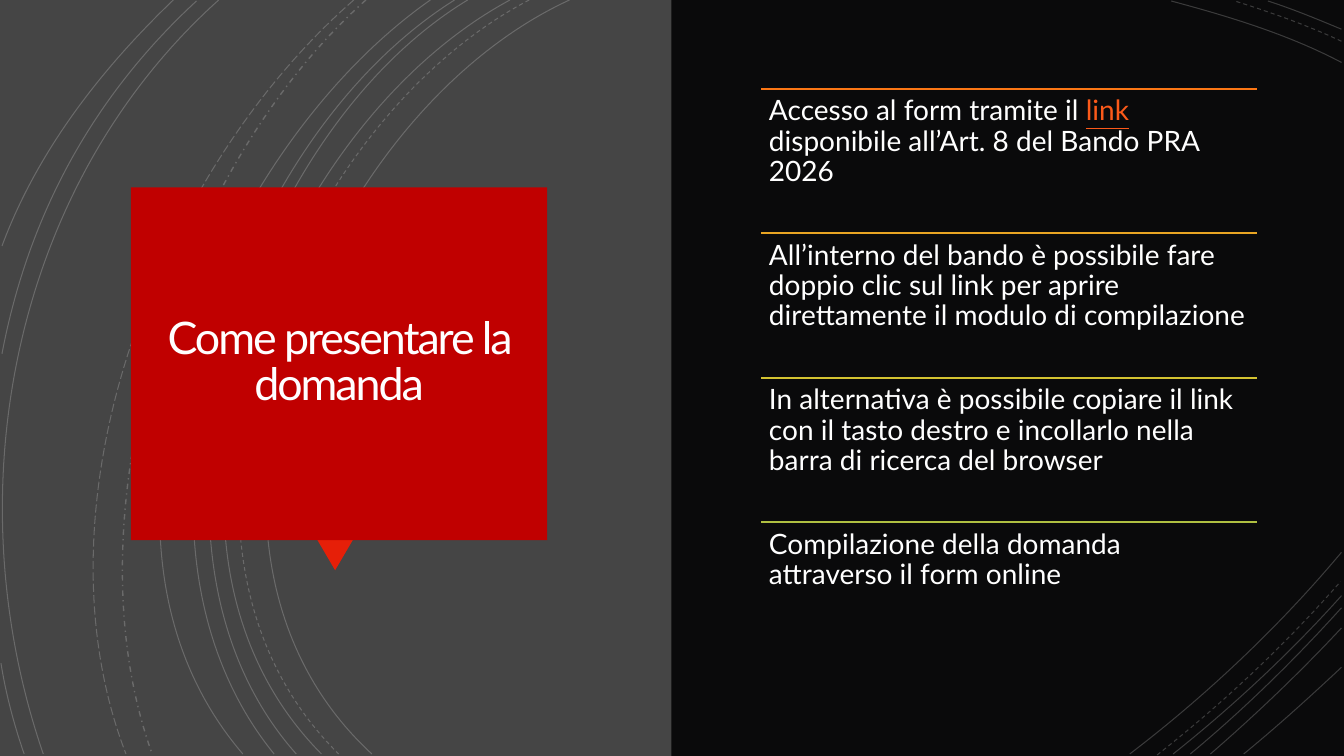
from lxml import etree
from pptx import Presentation
from pptx.dml.color import RGBColor
from pptx.enum.dml import MSO_LINE
from pptx.enum.shapes import MSO_CONNECTOR, MSO_SHAPE
from pptx.enum.text import MSO_ANCHOR, MSO_AUTO_SIZE, PP_ALIGN
from pptx.oxml.ns import qn
from pptx.util import Cm, Pt

SOLID, DASH = MSO_LINE.SOLID, MSO_LINE.DASH
DASH_DOT, LONG_DASH = MSO_LINE.DASH_DOT, MSO_LINE.LONG_DASH
RECTANGLE, TRIANGLE = MSO_SHAPE.RECTANGLE, MSO_SHAPE.ISOSCELES_TRIANGLE
STRAIGHT = MSO_CONNECTOR.STRAIGHT
CENTER, MIDDLE, TOP = PP_ALIGN.CENTER, MSO_ANCHOR.MIDDLE, MSO_ANCHOR.TOP
NO_AUTOFIT = MSO_AUTO_SIZE.NONE

FONT = "Lato"
COLORS = {
    "background": "454545", "panel": "000001", "curve": "FFFFFF",
    "title_fill": "C00000", "title_text": "FFFEFF", "pointer": "F81B02",
    "text": "FFFFFF", "link": "FC5A1A",
}

TITLE = "Come presentare la domanda"
LINK_WORD = "link"
# Rule colour, then the pieces of text of each step
STEPS = [
    ("FC7715", ["Accesso al form tramite il ", LINK_WORD,
                " disponibile all’Art. 8 del Bando PRA 2026"]),
    ("E9A523", ["All’interno del bando è possibile fare doppio clic sul link "
                "per aprire direttamente il modulo di compilazione"]),
    ("D4C331", ["In alternativa è possibile copiare il link con il tasto destro "
                "e incollarlo nella barra di ricerca del browser"]),
    ("AFBF41", ["Compilazione della domanda attraverso il form online"]),
]

# Start, two control points and end of each curve, in hundredths of 2.54 cm
CURVE_UNIT = Cm(2.54) / 100
CURVES = [
    (SOLID, [(565, 0), (315, 115), (143, 540), (369, 748)]),
    (SOLID, [(1331, 62), (1278, 34), (1218, 16), (1162, 1)]),
    (SOLID, [(1121, 748), (1197, 690), (1269, 622), (1331, 548)]),
    (DASH, [(525, 0), (285, 125), (123, 537), (336, 748)]),
    (DASH, [(1331, 41), (1297, 25), (1260, 12), (1225, 1)]),
    (DASH, [(1148, 749), (1213, 698), (1275, 640), (1330, 577)]),
    (SOLID, [(506, 0), (270, 127), (110, 537), (319, 748)]),
    (SOLID, [(1331, 29), (1307, 19), (1283, 9), (1258, 1)]),
    (SOLID, [(1164, 748), (1223, 701), (1280, 648), (1331, 591)]),
    (SOLID, [(464, 0), (244, 133), (110, 541), (294, 748)]),
    (SOLID, [(1181, 748), (1234, 704), (1284, 655), (1331, 603)]),
    (SOLID, [(451, 0), (231, 138), (97, 533), (272, 748)]),
    (SOLID, [(1201, 748), (1246, 709), (1290, 667), (1331, 623)]),
    (SOLID, [(427, 0), (217, 147), (53, 529), (241, 748)]),
    (SOLID, [(1234, 748), (1267, 721), (1299, 692), (1331, 662)]),
    (DASH_DOT, [(363, 0), (176, 166), (65, 509), (151, 748)]),
    (LONG_DASH, [(351, 0), (157, 169), (29, 499), (125, 748)]),
    (SOLID, [(217, 0), (11, 185), (-46, 490), (43, 748)]),
    (SOLID, [(195, 1), (92, 96), (28, 214), (2, 351)]),
    (SOLID, [(1, 658), (6, 689), (14, 719), (24, 748)]),
    (SOLID, [(172, 0), (100, 69), (37, 150), (2, 244)]),
]

# Lengths in cm
SLIDE_WIDTH, SLIDE_HEIGHT = 33.87, 19.05
PANEL_LEFT = 16.92
TITLE_BOX = (3.3, 4.72, 10.49, 8.89)
TITLE_INSET = 0.64
POINTER_BOX = (8, 13.61, 0.89, 0.76)
STEP_LEFT, STEP_TOP, STEP_WIDTH, STEP_HEIGHT = 19.18, 2.24, 12.5, 3.64
STEP_INSET = 0.2


def color(name):
    return RGBColor.from_string(COLORS[name])


def set_opacity(shape, percent):
    for node in shape._element.spPr.iter(qn("a:srgbClr")):
        etree.SubElement(node, qn("a:alpha"), val=str(percent * 1000))


def add_block(slide, kind, box, fill, opacity):
    block = slide.shapes.add_shape(kind, *map(Cm, box))
    block.shadow.inherit = False
    block.fill.solid()
    block.fill.fore_color.rgb = color(fill)
    block.line.fill.background()
    set_opacity(block, opacity)
    return block


def add_curve(group, dash, points):
    """Draw the four points as one cubic curve."""
    builder = group.shapes.build_freeform(*points[0], scale=CURVE_UNIT)
    builder.add_line_segments(points[1:], close=False)
    curve = builder.convert_to_shape()
    outline = curve._element.spPr.find(".//" + qn("a:path"))
    segments = outline.findall(qn("a:lnTo"))
    cubic = etree.SubElement(outline, qn("a:cubicBezTo"))
    for segment in segments:
        cubic.append(segment[0])
        outline.remove(segment)
    curve.shadow.inherit = False
    curve.fill.background()
    curve.line.color.rgb = color("curve")
    curve.line.width = Pt(1 if dash == DASH_DOT else 0.75)
    curve.line.dash_style = dash
    set_opacity(curve, 20)


def format_frame(frame, inset, anchor):
    frame.word_wrap = True
    frame.auto_size = NO_AUTOFIT
    frame.vertical_anchor = anchor
    frame.margin_left = frame.margin_right = Cm(inset)
    frame.margin_top = frame.margin_bottom = Cm(inset)


def format_para(para, size, text_color, spacing):
    para.line_spacing = spacing
    para.font.name = FONT
    para.font.size = Pt(size)
    para.font.color.rgb = color(text_color)


def place_title(slide):
    title = slide.shapes.title
    title.left, title.top, title.width, title.height = map(Cm, TITLE_BOX)
    title.fill.solid()
    title.fill.fore_color.rgb = color("title_fill")
    title.text_frame.text = TITLE
    format_frame(title.text_frame, TITLE_INSET, MIDDLE)
    para = title.text_frame.paragraphs[0]
    para.alignment = CENTER
    format_para(para, 32, "title_text", 0.85)
    para.runs[0].font._element.set("spc", "-150")
    slide.shapes._spTree.append(title._element)  # in front of the curves


def add_step(slide, top, rule_color, pieces):
    rule = slide.shapes.add_connector(
        STRAIGHT, Cm(STEP_LEFT), Cm(top), Cm(STEP_LEFT + STEP_WIDTH), Cm(top))
    rule.line.color.rgb = RGBColor.from_string(rule_color)
    rule.line.width = Pt(1.25)
    etree.SubElement(rule._element.spPr, qn("a:effectLst"))

    box = slide.shapes.add_textbox(
        Cm(STEP_LEFT), Cm(top), Cm(STEP_WIDTH), Cm(STEP_HEIGHT))
    format_frame(box.text_frame, STEP_INSET, TOP)
    para = box.text_frame.paragraphs[0]
    format_para(para, 20, "text", 0.9)
    for piece in pieces:
        span = para.add_run()
        span.text = piece
        if piece == LINK_WORD:
            span.font.color.rgb = color("link")
            span.font.underline = True


def main():
    deck = Presentation()
    deck.slide_width, deck.slide_height = Cm(SLIDE_WIDTH), Cm(SLIDE_HEIGHT)
    slide = deck.slides.add_slide(deck.slide_layouts.get_by_name("Title Only"))
    slide.background.fill.solid()
    slide.background.fill.fore_color.rgb = color("background")

    panel_box = (PANEL_LEFT, 0, SLIDE_WIDTH - PANEL_LEFT, SLIDE_HEIGHT)
    add_block(slide, RECTANGLE, panel_box, "panel", 85)
    curves = slide.shapes.add_group_shape()
    for dash, points in CURVES:
        add_curve(curves, dash, points)
    pointer = add_block(slide, TRIANGLE, POINTER_BOX, "pointer", 90)
    pointer.rotation = 180
    place_title(slide)
    for index, (rule_color, pieces) in enumerate(STEPS):
        add_step(slide, STEP_TOP + index * STEP_HEIGHT, rule_color, pieces)
    deck.save("out.pptx")


if __name__ == "__main__":
    main()
